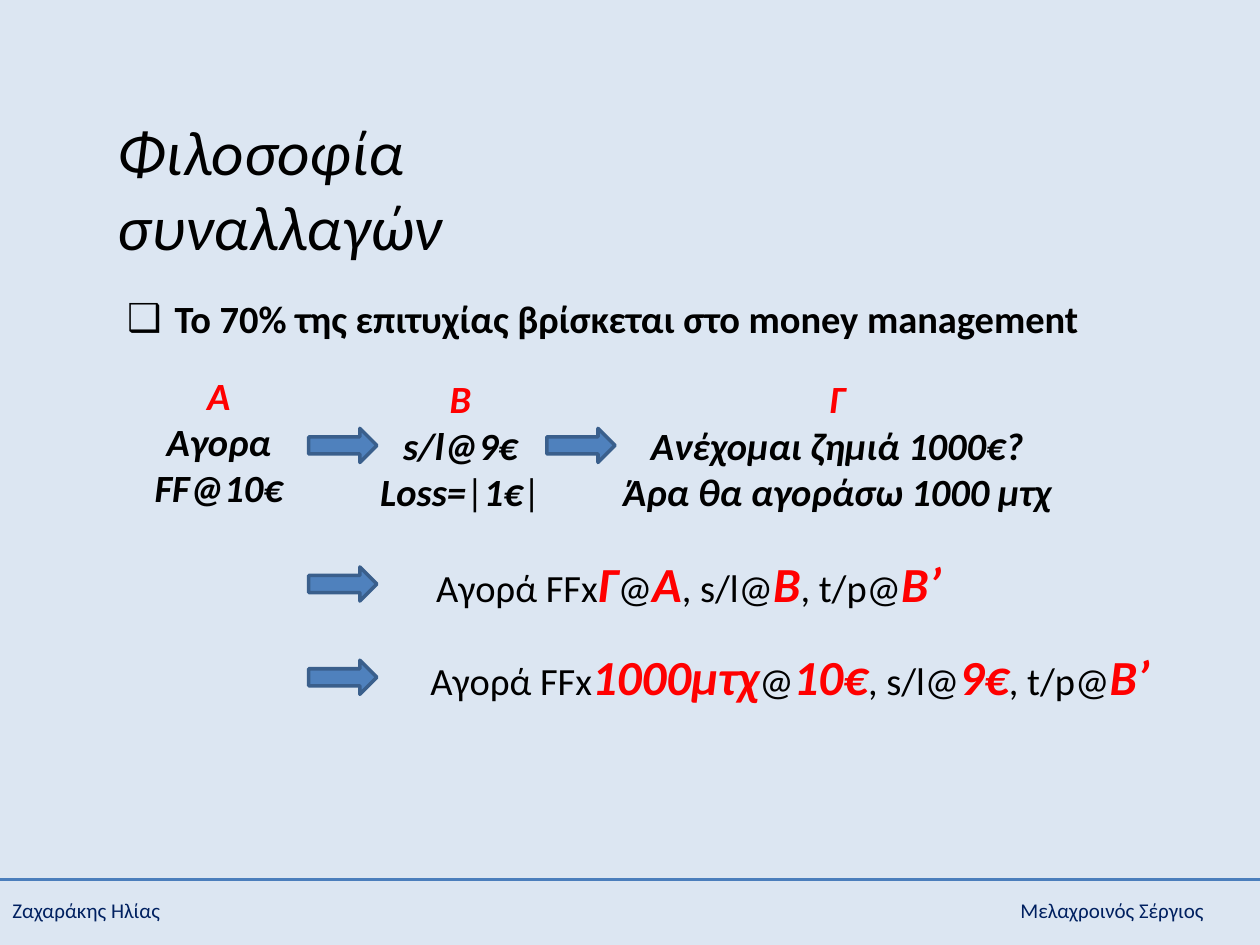
import pptx
import pptx.util
import pptx.dml.color
import pptx.enum.shapes
import pptx.enum.text
import lxml.etree
from pptx.oxml.ns import qn

Pt = pptx.util.Pt
ALIGN = pptx.enum.text.PP_ALIGN
ANCHOR = pptx.enum.text.MSO_ANCHOR
COLORS = {"back": "DCE6F2", "rule": "4B7EBC", "foot": "002060", "text": "000000",
          "mark": "FF0000", "fill": "4F81BD", "edge": "3A5F8C"}


def rgb(name):
    return pptx.dml.color.RGBColor.from_string(COLORS[name])


def style(font, size, color, bold=False, italic=False):
    font.name, font.size = "Calibri", Pt(size)
    font.bold, font.italic = bold, italic
    font.color.rgb = rgb(color)


deck = pptx.Presentation()
deck.slide_width, deck.slide_height = Pt(720), Pt(540)
slide = deck.slides.add_slide(deck.slide_layouts[1])
slide.background.fill.solid()
slide.background.fill.fore_color.rgb = rgb("back")
shapes = slide.shapes

# Footer
foot = shapes.add_textbox(Pt(0), Pt(500.4), Pt(720), Pt(39.6)).text_frame
foot.word_wrap = True
foot.vertical_anchor = ANCHOR.MIDDLE
par = foot.paragraphs[0]
par.text = "Ζαχαράκης Ηλίας\tΜελαχροινός Σέργιος"
style(par.font, 12, "foot")
tabs = lxml.etree.Element(qn("a:tabLst"))
lxml.etree.SubElement(tabs, qn("a:tab"), pos=str(Pt(576)), algn="l")
par._p.get_or_add_pPr().insert(0, tabs)

rule = shapes.add_connector(pptx.enum.shapes.MSO_CONNECTOR.STRAIGHT,
                            Pt(0), Pt(502.6), Pt(720), Pt(502.6))
rule.line.color.rgb = rgb("rule")
rule.line.width = Pt(1.5)
lxml.etree.SubElement(rule._element.spPr, qn("a:effectLst"))

# Title and list
title = shapes.title
title.left, title.top, title.width, title.height = Pt(60), Pt(60.5), Pt(272), Pt(94.5)
title.text_frame.text = "Φιλοσοφία συναλλαγών"
title.text_frame.vertical_anchor = ANCHOR.TOP
par = title.text_frame.paragraphs[0]
par.alignment = ALIGN.LEFT
style(par.font, 36, "text", italic=True)

body = slide.placeholders[1]
body.left, body.top, body.width, body.height = Pt(65.5), Pt(165), Pt(590), Pt(87)
body.text_frame.text = "Το 70% της επιτυχίας βρίσκεται στο money management"
par = body.text_frame.paragraphs[0]
par.alignment = ALIGN.JUSTIFY
par.space_before = Pt(0)
style(par.font, 22, "text", bold=True)
props = par._p.get_or_add_pPr()
props.set("marL", str(Pt(27)))
props.set("indent", str(Pt(-27)))
bullet = lxml.etree.Element(qn("a:buChar"), char="❑")
props.find(qn("a:defRPr")).addprevious(bullet)

# Steps: red letter above black lines; a bar around a value is plain
steps = [
    (77, 208.8, 96, "Α", ["Αγορα FF@10€"]),
    (206.6, 211, 113, "Β", ["s/l@9€", "Loss=|1€|"]),
    (342.7, 211, 271.5, "Γ", ["Ανέχομαι ζημιά 1000€?", "Άρα θα αγοράσω 1000 μτχ"]),
]
for left, top, width, letter, lines in steps:
    frame = shapes.add_textbox(Pt(left), Pt(top), Pt(width), Pt(87)).text_frame
    frame.word_wrap = True
    for num, line in enumerate([letter] + lines):
        par = frame.paragraphs[0] if num == 0 else frame.add_paragraph()
        par.alignment = ALIGN.CENTER
        style(par.font, 22, "text" if num else "mark", True, True)
        for piece in line.replace("|", "\n|\n").split("\n"):
            if piece:
                run = par.add_run()
                run.text = piece
                plain = piece == "|"
                style(run.font, 22, "text" if num else "mark", not plain, not plain)

# Orders: every second part is a large red value
orders = [
    (211.7, 312.5, 363.6, ["Αγορά FFx", "Γ", "@", "A", ", s/l@", "B", ", t/p@", "B’"]),
    (230.4, 365.8, 442, ["Αγορά FFx", "1000μτχ", "@", "10€", ", s/l@", "9€", ", t/p@", "Β’"]),
]
for left, top, width, parts in orders:
    frame = shapes.add_textbox(Pt(left), Pt(top), Pt(width), Pt(41)).text_frame
    frame.word_wrap = True
    par = frame.paragraphs[0]
    par.alignment = ALIGN.CENTER
    for num, part in enumerate(parts):
        run = par.add_run()
        run.text = part
        if num % 2:
            style(run.font, 28, "mark", True, True)
        else:
            style(run.font, 22, "text")

for left, top in [(176.4, 244.8), (312.5, 244.8), (176.4, 324), (176.4, 377.3)]:
    arrow = shapes.add_shape(pptx.enum.shapes.MSO_SHAPE.RIGHT_ARROW,
                             Pt(left), Pt(top), Pt(39), Pt(19.5))
    arrow.shadow.inherit = False
    arrow.fill.solid()
    arrow.fill.fore_color.rgb = rgb("fill")
    arrow.line.color.rgb = rgb("edge")
    arrow.line.width = Pt(2)

deck.save("out.pptx")
